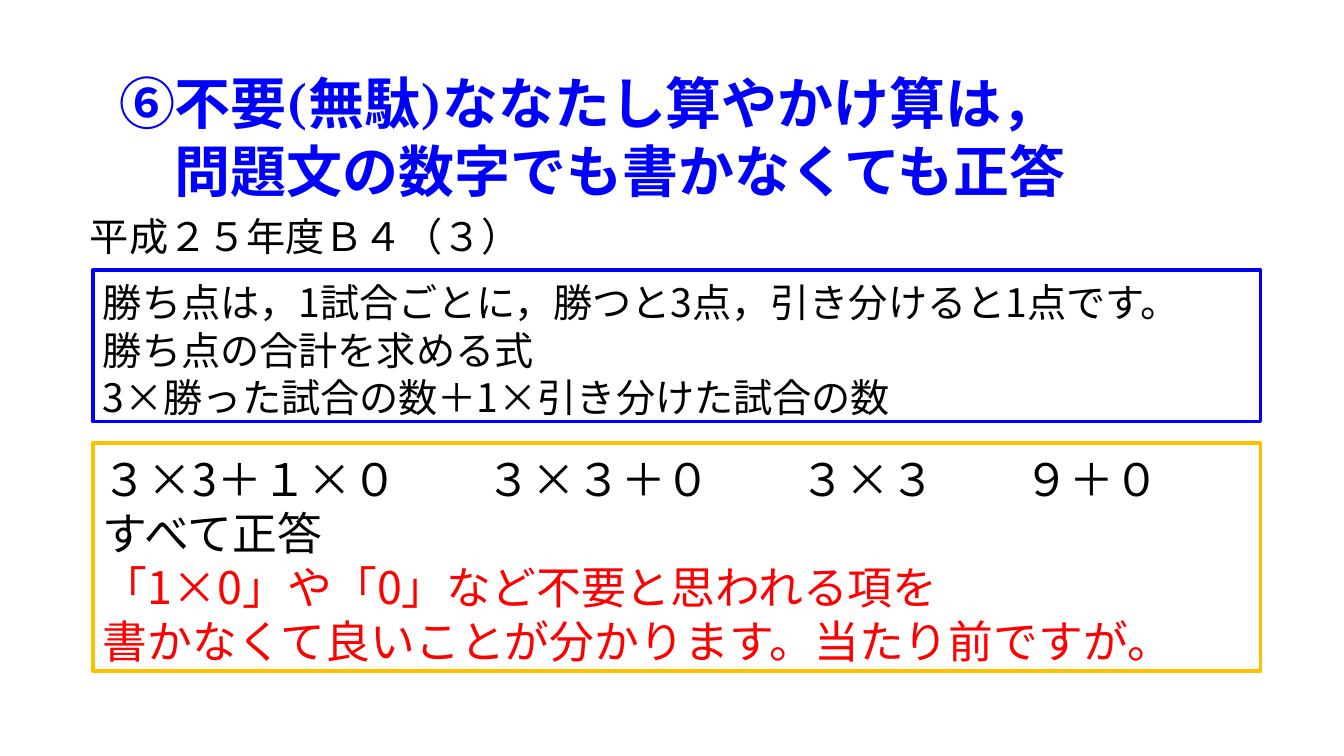
from lxml.etree import SubElement
from pptx import Presentation
from pptx.dml.color import RGBColor
from pptx.enum.lang import MSO_LANGUAGE_ID
from pptx.enum.shapes import MSO_SHAPE
from pptx.enum.text import MSO_ANCHOR, PP_ALIGN
from pptx.oxml.ns import qn
from pptx.util import Emu, Pt

SANS = "Noto Sans CJK JP"
SERIF = "TeX Gyre Schola"
BLACK, BLUE, RED, GOLD = "000000", "0000FF", "FF0000", "FFC000"


def px(length):
    return Emu(round(length * 914400 / 100.8))


def color(hex_string):
    return RGBColor.from_string(hex_string)


class ScoringSlide:
    east_asian_font = SANS
    line_pitch = 1.21
    border_width = Pt(2.25)

    def __init__(self, presentation):
        self.slide = presentation.slides.add_slide(presentation.slide_layouts[6])

    def add_run(self, paragraph, text, size, font_name, text_color, bold):
        run = paragraph.add_run()
        run.text = text
        font = run.font
        font.name, font.size, font.bold = font_name, Pt(size), bold
        font.color.rgb = color(text_color)
        font.language_id = MSO_LANGUAGE_ID.JAPANESE
        SubElement(run._r.rPr, qn("a:ea"), typeface=self.east_asian_font)

    def fill_text(self, shape, lines, size, font_name, bold=False, wrap=True):
        """Fill a shape with (text, colour) lines, one paragraph each."""
        frame = shape.text_frame
        frame.word_wrap = wrap
        frame.vertical_anchor = MSO_ANCHOR.TOP
        frame.margin_left, frame.margin_top = px(10), px(8)
        frame.margin_right = frame.margin_bottom = 0
        for index, (text, text_color) in enumerate(lines):
            paragraph = frame.paragraphs[0] if index == 0 else frame.add_paragraph()
            paragraph.alignment = PP_ALIGN.LEFT
            paragraph.line_spacing = Pt(round(size * self.line_pitch, 1))
            self.add_run(paragraph, text, size, font_name, text_color, bold)

    def text(self, left, top, width, height, lines, size, **style):
        box = self.slide.shapes.add_textbox(px(left), px(top), px(width), px(height))
        self.fill_text(box, lines, size, SERIF, **style)

    def framed_text(self, left, top, width, height, border, lines, size):
        frame = self.slide.shapes.add_shape(
            MSO_SHAPE.RECTANGLE, px(left), px(top), px(width), px(height))
        frame.shadow.inherit = False
        frame.fill.background()
        frame.line.color.rgb = color(border)
        frame.line.width = self.border_width
        self.fill_text(frame, lines, size, SANS)


def main():
    presentation = Presentation()
    presentation.slide_width, presentation.slide_height = px(1344), px(756)
    slide = ScoringSlide(presentation)
    slide.text(109, 60, 982, 146, [
        ("⑥不要(無駄)ななたし算やかけ算は，", BLUE),
        ("　問題文の数字でも書かなくても正答", BLUE),
    ], 40, bold=True, wrap=False)
    slide.text(80, 204, 462, 57, [("平成２５年度Ｂ４（３）", BLACK)], 28)
    slide.framed_text(93, 270, 1168, 152, BLUE, [
        ("勝ち点は，1試合ごとに，勝つと3点，引き分けると1点です。", BLACK),
        ("勝ち点の合計を求める式", BLACK),
        ("3×勝った試合の数＋1×引き分けた試合の数", BLACK),
    ], 28)
    slide.framed_text(93, 443, 1168, 228, GOLD, [
        ("３×3＋１×０　　３×３＋０　　３×３　　９＋０", BLACK),
        ("すべて正答", BLACK),
        ("「1×0」や「0」など不要と思われる項を", RED),
        ("書かなくて良いことが分かります。当たり前ですが。", RED),
    ], 32)
    presentation.save("out.pptx")


if __name__ == "__main__":
    main()
